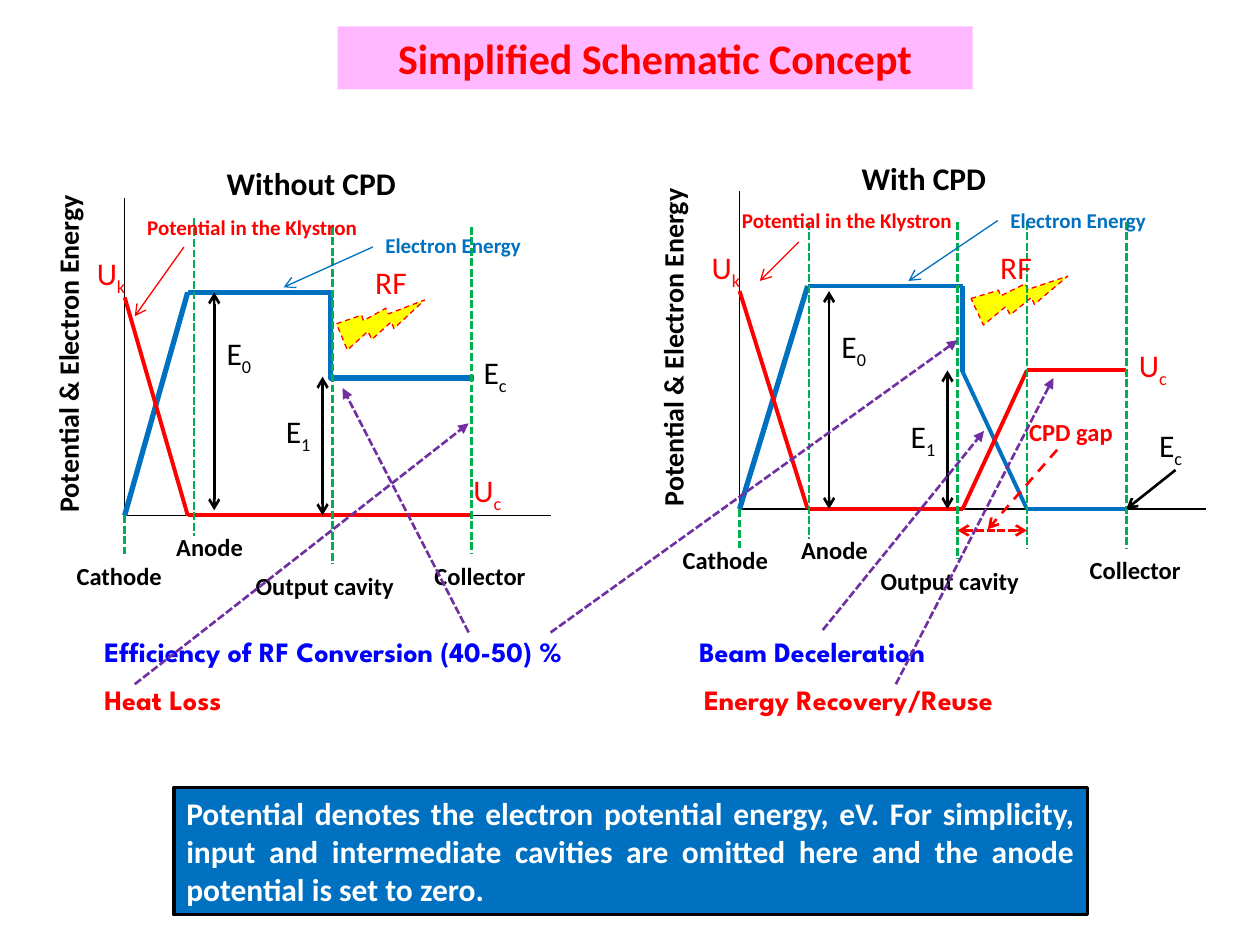
from dataclasses import dataclass

from lxml import etree
from pptx import Presentation
from pptx.dml.color import RGBColor
from pptx.enum.dml import MSO_LINE as DASH
from pptx.enum.shapes import MSO_CONNECTOR as CONNECTOR, MSO_SHAPE as SHAPE
from pptx.enum.text import MSO_ANCHOR as ANCHOR, PP_ALIGN as ALIGN
from pptx.oxml.ns import qn
from pptx.util import Inches, Pt


@dataclass(frozen=True)
class Theme:
    font: str = "Calibri"
    caption_font: str = "League Spartan"
    black: str = "000000"
    white: str = "FFFFFF"
    red: str = "FF0000"
    blue: str = "0070C0"
    green: str = "00B050"
    yellow: str = "FFFF00"
    purple: str = "7030A0"
    caption_blue: str = "0000FF"
    pink: str = "FF66FF"
    title: int = 24
    symbol: int = 18
    axis: int = 16
    electrode: int = 14
    small: int = 12


THEME = Theme()
BASE = 2.52  # depth of the zero line below the top of a diagram


def rgb(color):
    return RGBColor.from_string(color)


def style_font(font, size, color, bold=True, name=THEME.font):
    font.name, font.size, font.bold = name, Pt(size), bold
    font.color.rgb = rgb(color)


@dataclass
class Region:
    """Draws parts relative to the top left corner of a box, in inches."""
    slide: object
    left: float = 0
    top: float = 0

    def place(self, x, y):
        return Inches(self.left + x), Inches(self.top + y)

    def line(self, start, end, color, width, dash=None, head=None, tail=None,
             kind=CONNECTOR.STRAIGHT):
        connector = self.slide.shapes.add_connector(kind, *self.place(*start), *self.place(*end))
        connector.line.color.rgb = rgb(color)
        connector.line.width = Pt(width)
        if dash:
            connector.line.dash_style = dash
        properties = connector._element.spPr
        outline = properties.find(qn("a:ln"))
        for tag, arrow in (("a:headEnd", head), ("a:tailEnd", tail)):
            if arrow:
                etree.SubElement(outline, qn(tag), type=arrow)
        etree.SubElement(properties, qn("a:effectLst"))

    def text(self, text, x, y, width, height, size, color=THEME.black, bold=True,
             name=THEME.font, subscript="", wrap=True):
        box = self.slide.shapes.add_textbox(*self.place(x, y), Inches(width), Inches(height))
        box.text_frame.word_wrap = wrap
        paragraph = box.text_frame.paragraphs[0]
        paragraph.add_run().text = text
        style_font(paragraph.font, size, color, bold, name)
        if subscript:
            run = paragraph.add_run()
            run.text = subscript
            run._r.get_or_add_rPr().set("baseline", "-25000")
        return box

    def symbol(self, letter, subscript, x, y, color=THEME.black, width=0.47):
        self.text(letter, x, y, width, 0.4, THEME.symbol, color, False, subscript=subscript)

    def electrode(self, name, x, y, width=0.94, color=THEME.black):
        self.text(name, x, y, width, 0.34, THEME.electrode, color)

    def guide(self, x, top, bottom):
        self.line((x, top), (x, bottom), THEME.green, 1.5, DASH.SQUARE_DOT)

    def level(self, x, top, bottom):
        self.line((x, top), (x, bottom), THEME.black, 1.5, head="arrow", tail="arrow")

    def bolt(self, x, y, height):
        bolt = self.slide.shapes.add_shape(
            SHAPE.LIGHTNING_BOLT, *self.place(x, y), Inches(0.49), Inches(height))
        bolt.rotation = 279.2
        bolt.shadow.inherit = False
        bolt.fill.solid()
        bolt.fill.fore_color.rgb = rgb(THEME.yellow)
        bolt.line.color.rgb = rgb(THEME.red)
        bolt.line.width = Pt(0.75)
        bolt.line.dash_style = DASH.DASH


def draw_gun(region, anode, axis_width, potential_end, axis_text_x, axis_text_length):
    """Axes, cathode to anode curves and the labels that both diagrams share."""
    zero = (0, BASE)
    region.line((0, 0), zero, THEME.black, 0.75)
    region.line(zero, (axis_width, BASE), THEME.black, 0.75)
    region.line(zero, (anode, 0.75), THEME.blue, 3)
    region.line((0, 0.79), (anode, BASE), THEME.red, 2.25)
    region.line((anode, BASE), (potential_end, BASE), THEME.red, 2.25)
    region.guide(0, BASE, 2.83)
    # The axis title is turned about its centre and starts just below the zero line
    axis = region.text("Potential & Electron Energy", axis_text_x - axis_text_length / 2,
                       2.41 - axis_text_length / 2, axis_text_length, 0.37, THEME.axis)
    axis.rotation = 270
    region.symbol("U", "k", -0.32, 0.4, THEME.red)
    region.symbol("E", "0", 0.71, 1.03)


def draw_callouts(region, potential, energy, potential_arrow, energy_arrow):
    region.text("Potential in the Klystron", *potential, 2.05, 0.3, THEME.small, THEME.red)
    region.text("Electron Energy", *energy, 1.34, 0.3, THEME.small, THEME.blue)
    region.line(*potential_arrow, THEME.red, 0.75, tail="arrow")
    region.line(*energy_arrow, THEME.blue, 0.75, tail="arrow")


def draw_without_cpd(slide, left, top):
    region = Region(slide, left, top)
    region.text("Without CPD", 0.71, -0.32, 1.81, 0.4, THEME.symbol)
    draw_gun(region, 0.5, 3.38, 2.75, -0.45, 2.76)
    region.line((0.5, 0.75), (2.77, 1.43), THEME.blue, 3, kind=CONNECTOR.ELBOW)
    region.bolt(1.77, 0.67, 0.66)
    for guide in ((0.55, 0.16, 2.68), (1.65, 0.23, 2.91), (2.75, 0.23, 2.83)):
        region.guide(*guide)
    for electrode in (("Cathode", -0.48, 2.83), ("Anode", 0.31, 2.6, 0.79),
                      ("Output cavity", 0.94, 2.91, 1.57), ("Collector", 2.36, 2.83)):
        region.electrode(*electrode)
    draw_callouts(region, (0.08, 0.08), (1.97, 0.23),
                  ((0.47, 0.39), (0.08, 0.94)), ((1.97, 0.39), (1.26, 0.71)))
    region.level(0.71, 0.75, 2.48)
    region.level(1.57, 1.42, BASE)
    region.symbol("RF", "", 1.89, 0.47, THEME.red, 0.63)
    region.symbol("E", "1", 1.18, 1.65)
    region.symbol("E", "c", 2.75, 1.18)
    region.symbol("U", "c", 2.67, 2.12, THEME.red)


def draw_with_cpd(slide, left, top):
    region = Region(slide, left, top)
    region.text("With CPD", 0.87, -0.31, 1.42, 0.4, THEME.symbol)
    cavity, gap_end, collector = 1.77, 2.28, 3.07
    draw_gun(region, 0.54, 3.7, cavity, -0.53, 2.99)
    # Beam energy falls in the gap while the potential rises
    region.line((0.54, 0.75), (cavity, 0.75), THEME.blue, 2.25)
    region.line((cavity, 0.75), (cavity, 1.43), THEME.blue, 3)
    region.line((cavity, 1.43), (gap_end, BASE), THEME.blue, 2.25)
    region.line((gap_end, BASE), (collector, BASE), THEME.blue, 2.25)
    region.line((gap_end, 1.42), (cavity, BASE), THEME.red, 2.25)
    region.line((collector, 1.42), (gap_end, 1.42), THEME.red, 2.25)
    region.bolt(1.96, 0.49, 0.73)
    for x, bottom in ((0.55, 2.76), (1.73, 2.92), (gap_end, 2.84), (collector, 2.84)):
        region.guide(x, 0.24, bottom)
    for electrode in (("Cathode", -0.55, 2.76), ("Anode", 0.39, 2.68, 0.79),
                      ("Output cavity", 1.02, 2.92, 1.57), ("Collector", 2.68, 2.84),
                      ("CPD gap", 2.2, 1.74, 0.94, THEME.red)):
        region.electrode(*electrode)
    draw_callouts(region, (-0.08, 0.08), (2.05, 0.08),
                  ((0.47, 0.4), (0.16, 0.71)), ((2.05, 0.23), (1.34, 0.71)))
    region.level(0.71, 0.79, BASE)
    region.level(1.65, 1.42, BASE)
    region.symbol("RF", "", 1.97, 0.4, THEME.red, 0.63)
    region.symbol("E", "1", 1.26, 1.74)
    region.symbol("E", "c", 3.23, 1.81, width=0.39)
    region.symbol("U", "c", 3.07, 1.18, THEME.red)
    region.line((3.46, 2.21), (collector, BASE), THEME.black, 1.5, tail="arrow")
    # Width of the gap
    region.line((2.52, 2.05), (1.97, 2.68), THEME.red, 1.5, DASH.DASH, tail="arrow")
    region.line((gap_end, 2.69), (1.73, 2.69), THEME.red, 1.5, DASH.SQUARE_DOT, "arrow", "arrow")


def draw_captions(slide, left, top):
    region = Region(slide, left, top)
    for text, x, y, width, color in (
            ("Efficiency of RF Conversion (40-50) %", 0, 0, 4.17, THEME.caption_blue),
            ("Heat Loss", 0, 0.38, 1.22, THEME.red),
            ("Beam Deceleration", 4.72, 0, 2.31, THEME.caption_blue),
            ("Energy Recovery/Reuse", 4.76, 0.38, 2.8, THEME.red)):
        region.text(text, x, y, width, 0.37, THEME.axis, color,
                    name=THEME.caption_font, wrap=False)
    for start, end in (((2.99, 0.03), (1.99, -1.91)), ((0.34, 0.44), (2.99, -1.63)),
                       ((5.8, 0.01), (7.08, -1.57)), ((6.38, 0.44), (7.63, -1.99)),
                       ((3.64, 0.03), (6.87, -2.29))):
        region.line(start, end, THEME.purple, 1.5, DASH.SQUARE_DOT, tail="triangle")


def draw_title(slide, left, top, width, height):
    title = slide.shapes.title
    title.left, title.top, title.width, title.height = map(Inches, (left, top, width, height))
    title.text_frame.text = "Simplified Schematic Concept"
    title.text_frame.vertical_anchor = ANCHOR.MIDDLE
    paragraph = title.text_frame.paragraphs[0]
    paragraph.alignment = ALIGN.CENTER
    style_font(paragraph.font, THEME.title, THEME.red)
    title.fill.solid()
    title.fill.fore_color.rgb = rgb(THEME.pink)
    color = title._element.spPr.find(qn("a:solidFill"))[0]
    etree.SubElement(color, qn("a:alpha"), val="47000")


def draw_note(slide, left, top, width, height):
    note = slide.shapes.add_shape(SHAPE.RECTANGLE, *map(Inches, (left, top, width, height)))
    note.shadow.inherit = False
    note.fill.solid()
    note.fill.fore_color.rgb = rgb(THEME.blue)
    note.line.color.rgb = rgb(THEME.black)
    note.line.width = Pt(2)
    note.text_frame.word_wrap = True
    note.text_frame.text = (
        "Potential denotes the electron potential energy, eV. For simplicity, input and "
        "intermediate cavities are omitted here and the anode potential is set to zero.")
    paragraph = note.text_frame.paragraphs[0]
    paragraph.alignment = ALIGN.JUSTIFY
    style_font(paragraph.font, THEME.symbol, THEME.white)


def main():
    presentation = Presentation()
    presentation.slide_width, presentation.slide_height = Inches(10), Inches(7.5)
    slide = presentation.slides.add_slide(presentation.slide_layouts[5])
    draw_title(slide, 2.68, 0.21, 5.04, 0.5)
    draw_note(slide, 1.38, 6.25, 7.25, 1.01)
    draw_with_cpd(slide, 5.87, 1.52)
    draw_without_cpd(slide, 0.99, 1.57)
    draw_captions(slide, 0.73, 4.99)
    presentation.save("out.pptx")


if __name__ == "__main__":
    main()
